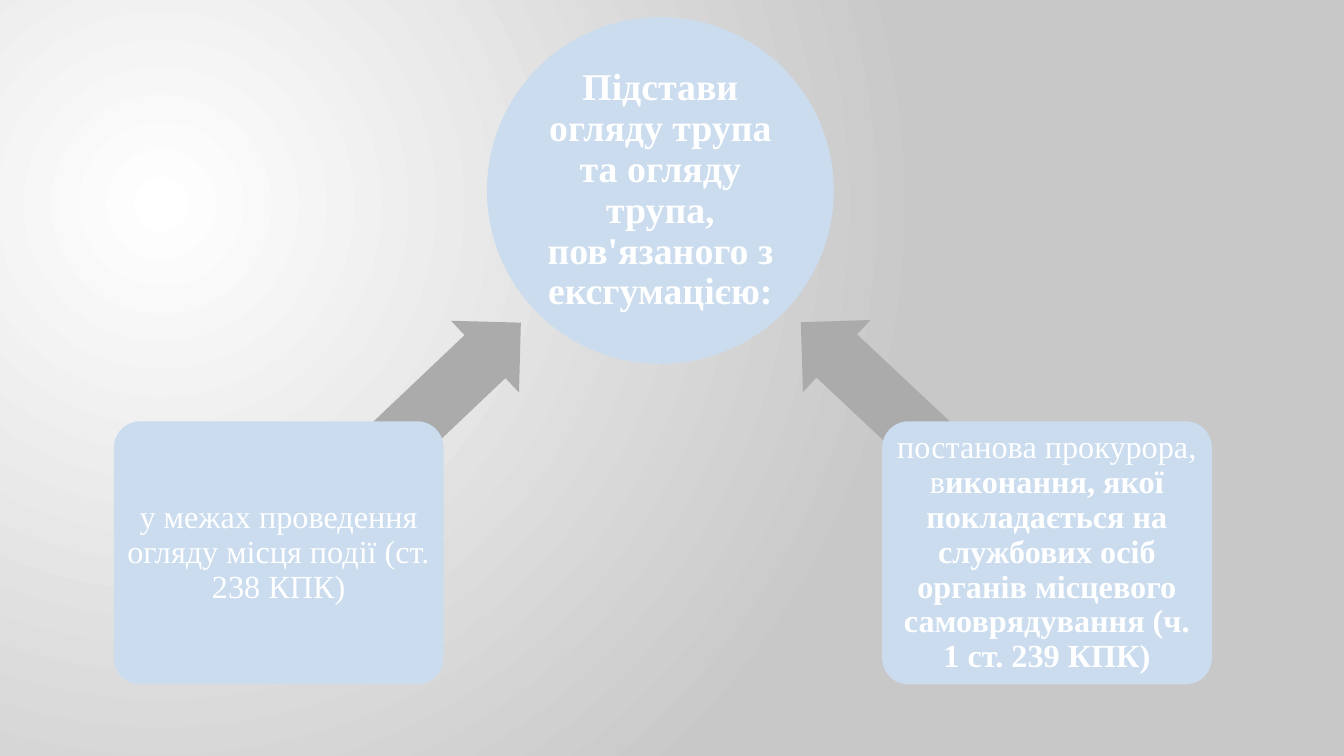
from lxml import etree
from pptx import Presentation
from pptx.dml.color import RGBColor
from pptx.enum.shapes import MSO_SHAPE
from pptx.enum.text import MSO_ANCHOR, PP_ALIGN
from pptx.oxml.ns import qn
from pptx.util import Inches, Pt

OVAL = MSO_SHAPE.OVAL
ROUNDED = MSO_SHAPE.ROUNDED_RECTANGLE
LEFT_ARROW = MSO_SHAPE.LEFT_ARROW
MIDDLE = MSO_ANCHOR.MIDDLE
CENTER = PP_ALIGN.CENTER

WHITE = RGBColor(0xFF, 0xFF, 0xFF)
SILVER = RGBColor(0xC8, 0xC8, 0xC8)
PALE_BLUE = RGBColor(0xCA, 0xDC, 0xEE)
GRAY = RGBColor(0xAB, 0xAB, 0xAB)
FONT = "Times New Roman"

TITLE = "Підстави огляду трупа та огляду трупа, пов'язаного з ексгумацією:"
GROUNDS = [
    (1.13, (2.31, 3.31, 136.5),
     [("у межах проведення огляду місця події (ст. 238 КПК)", False)]),
    (8.75, (7.49, 3.34, 43.2),
     [("постанова прокурора, в", False),
      ("иконання, якої покладається на службових осіб органів місцевого "
       "самоврядування (ч. 1 ст. 239 КПК)", True)]),
]


def paint_background(page):
    """Fill the page with a circular gradient from white to silver."""
    fill = page.background.fill
    fill.gradient()
    for stop, color in zip(fill.gradient_stops, (WHITE, SILVER)):
        stop.color.rgb = color
    gradient = page.element.find(".//" + qn("a:gradFill"))
    gradient.remove(gradient.find(qn("a:lin")))
    circle = etree.SubElement(gradient, qn("a:path"), {"path": "circle"})
    etree.SubElement(circle, qn("a:fillToRect"),
                     {"l": "50000", "t": "55000", "r": "125000", "b": "100000"})


def add_figure(page, kind, left, top, width, height, color, adjustments=()):
    """Add a plain filled shape without outline or shadow."""
    figure = page.shapes.add_shape(
        kind, Inches(left), Inches(top), Inches(width), Inches(height))
    figure.shadow.inherit = False
    figure.fill.solid()
    figure.fill.fore_color.rgb = color
    figure.line.fill.background()
    for index, value in enumerate(adjustments):
        figure.adjustments[index] = value
    return figure


def write_text(figure, spans, size, inset):
    """Write centred white text made of (words, bold) spans."""
    frame = figure.text_frame
    frame.word_wrap = True
    frame.vertical_anchor = MIDDLE
    frame.margin_left = frame.margin_right = Inches(inset)
    frame.margin_top = frame.margin_bottom = Inches(inset)
    para = frame.paragraphs[0]
    para.alignment = CENTER
    para.line_spacing = 0.9
    para.font.name = FONT
    para.font.size = Pt(size)
    para.font.color.rgb = WHITE
    for words, bold in spans:
        span = para.add_run()
        span.text = words
        span.font.bold = bold


def add_ground(page, left, arrow_place, spans):
    """Add a ground's box and the arrow that leads from it to the title."""
    arrow_left, arrow_width, angle = arrow_place
    arrow = add_figure(page, LEFT_ARROW, arrow_left, 3.85, arrow_width, 0.98,
                       GRAY, (0.6, 0.5))
    arrow.rotation = angle
    box = add_figure(page, ROUNDED, left, 4.18, 3.27, 2.61, PALE_BLUE, (0.1,))
    write_text(box, spans, 23, 0.05)


def main():
    """Build the slide and save it."""
    deck = Presentation()
    deck.slide_width = Inches(13.33)
    deck.slide_height = Inches(7.5)
    page = deck.slides.add_slide(deck.slide_layouts[6])
    paint_background(page)
    title = add_figure(page, OVAL, 4.83, 0.17, 3.44, 3.44, PALE_BLUE)
    write_text(title, [(TITLE, True)], 27, 0.02)
    for left, arrow_place, spans in GROUNDS:
        add_ground(page, left, arrow_place, spans)
    deck.save("out.pptx")


if __name__ == "__main__":
    main()
